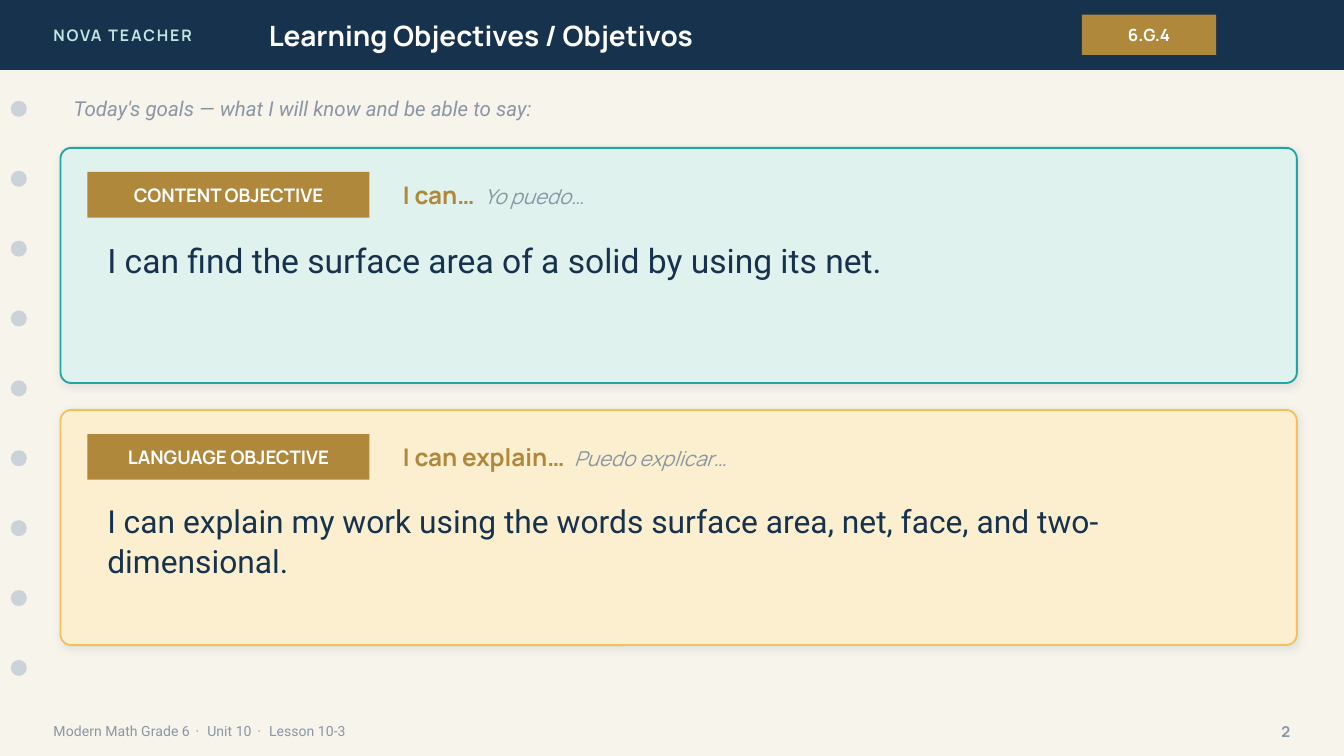
from lxml import etree
from pptx import Presentation
from pptx import util as u
from pptx.dml.color import RGBColor
from pptx.enum import shapes, text
from pptx.oxml.ns import qn

COLORS = {
    "paper": "F7F4EC", "navy": "17324D", "mint": "BFE6E2", "white": "FFFFFF",
    "gold": "B0883B", "dot": "CBD3D9", "grey": "8A96A3", "shadow": "1C2E42",
    "teal": "1FA6A2", "teal_tint": "DFF2EE", "amber": "F2C15B", "amber_tint": "FBEFD0",
}
KINDS = shapes.MSO_SHAPE


def write(sp, words, size, color, font="Manrope", bold=False, italic=False,
          spacing=0, align=text.PP_ALIGN.LEFT, anchor=text.MSO_ANCHOR.MIDDLE, leading=None):
    tf = sp.text_frame
    tf.word_wrap = True
    tf.auto_size = text.MSO_AUTO_SIZE.NONE
    tf.vertical_anchor = anchor
    p = tf.paragraphs[0]
    p.alignment = align
    if leading:
        p.line_spacing = leading
    r = p.add_run()
    r.text = words
    r.font.name = font
    r.font.size = u.Pt(size)
    r.font.bold = bold
    r.font.italic = italic
    r.font.color.rgb = RGBColor.from_string(COLORS[color])
    if spacing:
        r.font._element.set("spc", str(int(spacing * 100)))


def draw(kind, x, y, w, h, fill, line=None):
    sp = s.shapes.add_shape(kind, u.Inches(x), u.Inches(y), u.Inches(w), u.Inches(h))
    sp.shadow.inherit = False
    sp.fill.solid()
    sp.fill.fore_color.rgb = RGBColor.from_string(COLORS[fill])
    if line:
        sp.line.color.rgb = RGBColor.from_string(COLORS[line])
        sp.line.width = u.Pt(1)
    else:
        sp.line.fill.background()
    return sp


prs = Presentation()
prs.slide_width = u.Inches(10)
prs.slide_height = u.Inches(10) * 9 // 16
s = prs.slides.add_slide(prs.slide_layouts[5])
s.background.fill.solid()
s.background.fill.fore_color.rgb = RGBColor.from_string(COLORS["paper"])

bar = draw(KINDS.RECTANGLE, 0, 0, 10, 0.52, "navy")
brand = s.shapes.add_textbox(u.Inches(0.3), u.Inches(0), u.Inches(2.4), u.Inches(0.52))
write(brand, "NOVA TEACHER", 8.5, "mint", bold=True, spacing=1)
title = s.shapes.title
title.left, title.top = u.Inches(1.9), u.Inches(0)
title.width, title.height = u.Inches(5.6), u.Inches(0.52)
write(title, "Learning Objectives / Objetivos", 15, "white", bold=True)
brand.element.addnext(title.element)

standard = draw(KINDS.RECTANGLE, 8.05, 0.11, 1, 0.3, "gold")
write(standard, "6.G.4", 9, "white", bold=True, align=text.PP_ALIGN.CENTER)

for i in range(9):
    draw(KINDS.OVAL, 0.08, 0.75 + 0.52 * i, 0.12, 0.12, "dot")

footer = s.shapes.add_textbox(u.Inches(0.3), u.Inches(5.3), u.Inches(7), u.Inches(0.28))
for i, part in enumerate(["Modern Math Grade 6", "Unit 10", "Lesson 10-3"]):
    if i:
        write(footer, " · ", 7.5, "grey", font="Roboto", spacing=1.2)
    write(footer, part, 7.5, "grey", font="Roboto")
number = s.shapes.add_textbox(u.Inches(9.2), u.Inches(5.3), u.Inches(0.5), u.Inches(0.28))
write(number, "2", 8, "grey", bold=True, align=text.PP_ALIGN.RIGHT)

intro = s.shapes.add_textbox(u.Inches(0.45), u.Inches(0.66), u.Inches(9.2), u.Inches(0.3))
write(intro, "Today's goals — what I will know and be able to say:", 11, "grey",
      font="Roboto", italic=True)

objectives = [
    ("CONTENT OBJECTIVE", "I can…", "Yo puedo…",
     "I can find the surface area of a solid by using its net.", 18, "teal_tint", "teal"),
    ("LANGUAGE OBJECTIVE", "I can explain…", "Puedo explicar…",
     "I can explain my work using the words surface area, net, face, and two-dimensional.",
     17, "amber_tint", "amber"),
]
for i, (label, english, spanish, goal, size, fill, line) in enumerate(objectives):
    y = 1.1 + 1.95 * i
    card = draw(KINDS.ROUNDED_RECTANGLE, 0.45, y, 9.2, 1.75, fill, line)
    card.adjustments[0] = 0.046
    effects = card.element.spPr.find(qn("a:effectLst"))
    shadow = etree.SubElement(effects, qn("a:outerShdw"), blurRad=str(u.Pt(4)),
                              dist=str(u.Pt(1)), dir="5400000", rotWithShape="0")
    tint = etree.SubElement(shadow, qn("a:srgbClr"), val=COLORS["shadow"])
    etree.SubElement(tint, qn("a:alpha"), val="10000")

    tag = draw(KINDS.RECTANGLE, 0.65, y + 0.18, 2.1, 0.34, "gold")
    write(tag, label, 10, "white", bold=True, align=text.PP_ALIGN.CENTER)
    starter = s.shapes.add_textbox(u.Inches(2.9), u.Inches(y + 0.18), u.Inches(6.6), u.Inches(0.34))
    write(starter, english, 13, "gold", bold=True)
    write(starter, " ", 13, "gold", bold=True, spacing=2.6)
    write(starter, spanish, 11, "grey", italic=True)
    body = s.shapes.add_textbox(u.Inches(0.7), u.Inches(y + 0.62), u.Inches(8.7), u.Inches(1))
    write(body, goal, size, "navy", font="Roboto", anchor=text.MSO_ANCHOR.TOP, leading=1.05)

prs.save("out.pptx")
